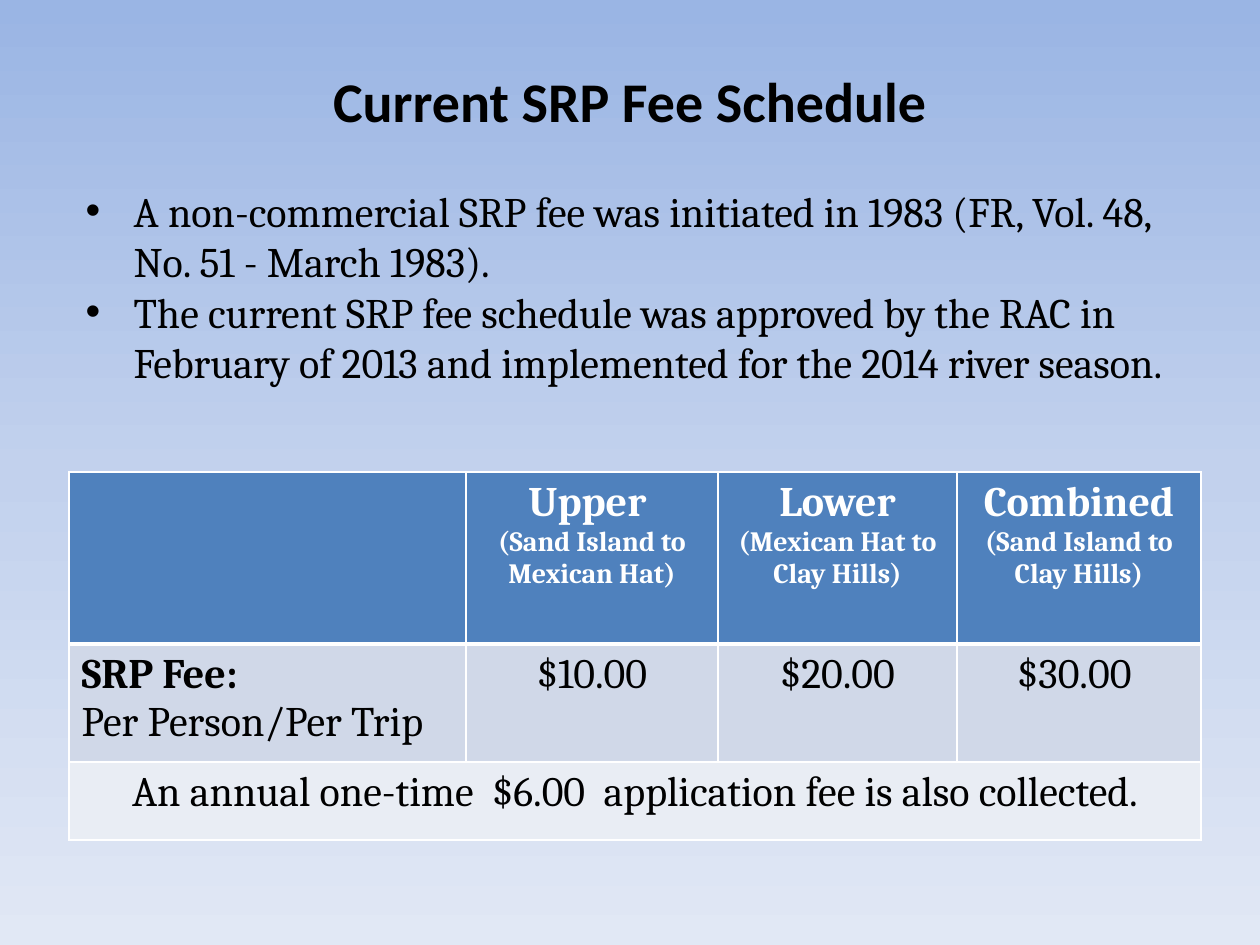
from copy import deepcopy

from lxml import etree
from pptx import Presentation
from pptx.dml.color import RGBColor
from pptx.enum.text import MSO_ANCHOR, MSO_AUTO_SIZE, PP_ALIGN
from pptx.oxml.ns import qn
from pptx.util import Pt

CENTER, LEFT = PP_ALIGN.CENTER, PP_ALIGN.LEFT
MIDDLE, TOP = MSO_ANCHOR.MIDDLE, MSO_ANCHOR.TOP
NO_FIT, GROW = MSO_AUTO_SIZE.NONE, MSO_AUTO_SIZE.SHAPE_TO_FIT_TEXT

BLACK = RGBColor(0x00, 0x00, 0x00)
WHITE = RGBColor(0xFF, 0xFF, 0xFF)
HEADER_BLUE = RGBColor(0x4F, 0x81, 0xBD)
BAND_DARK = RGBColor(0xD0, 0xD8, 0xE8)
BAND_LIGHT = RGBColor(0xE9, 0xED, 0xF4)
SKY = [
    (0, RGBColor(0x9A, 0xB5, 0xE4)),
    (0.5, RGBColor(0xC2, 0xD1, 0xED)),
    (1, RGBColor(0xE1, 0xE8, 0xF5)),
]

TITLE = {"name": "Calibri", "size": Pt(32), "bold": True, "color": BLACK}
BODY = {"name": "Cambria", "size": Pt(24), "bold": False, "color": BLACK}
LABEL = {**BODY, "bold": True}
HEADER = {**LABEL, "color": WHITE}
SUBHEADER = {**HEADER, "size": Pt(16)}

BULLETS = [
    "A non-commercial SRP fee was initiated in 1983 (FR, Vol. 48, No. 51 - March 1983).",
    "The current SRP fee schedule was approved by the RAC in February of 2013 "
    "and implemented for the 2014 river season.",
]
COLUMNS = [397, 252, 239, 244]
ROWS = [172, 118, 78]
ROW_FILLS = [HEADER_BLUE, BAND_DARK, BAND_LIGHT]
ROW_LINES = [1, 3, 1, 1]
REACHES = [
    ("Upper ", "(Sand Island to Mexican Hat)"),
    ("Lower", "(Mexican Hat to Clay Hills)"),
    ("Combined", "(Sand Island to Clay Hills)"),
]
FEES = ["$10.00", "$20.00", "$30.00 "]
FOOTNOTE = "An annual one-time  $6.00  application fee is also collected."


def px(length):
    return round(length * 914400 / 126)


def place(shape, left, top, width, height):
    shape.left, shape.top = px(left), px(top)
    shape.width, shape.height = px(width), px(height)


def add_bullet(para):
    properties = para._p.get_or_add_pPr()
    properties.set("marL", str(px(48)))
    properties.set("indent", str(-px(48)))
    etree.SubElement(properties, qn("a:buFont")).set("typeface", "Arial")
    etree.SubElement(properties, qn("a:buChar")).set("char", "•")


def write(frame, lines, align, bullets=False):
    for index, (text, style) in enumerate(lines):
        para = frame.paragraphs[0] if index == 0 else frame.add_paragraph()
        para.alignment = align
        para.space_before = Pt(0)
        if bullets:
            add_bullet(para)
        span = para.add_run()
        span.text = text
        for name, value in style.items():
            if name == "color":
                span.font.color.rgb = value
            else:
                setattr(span.font, name, value)


def fill_placeholder(box, bounds, lines, align, anchor, fit, bullets=False):
    place(box, *bounds)
    frame = box.text_frame
    frame.word_wrap = True
    frame.auto_size = fit
    frame.vertical_anchor = anchor
    write(frame, lines, align, bullets)


def paint_background(page):
    fill = page.background.fill
    fill.gradient()
    fill.gradient_angle = 270
    stop_list = page.element.find(".//" + qn("a:gsLst"))
    stop_list.append(deepcopy(stop_list[-1]))
    for stop, (position, color) in zip(fill.gradient_stops, SKY):
        stop.position = position
        stop.color.rgb = color


def format_cell(cell, fill, top_line, bottom_line):
    properties = cell._tc.get_or_add_tcPr()
    for side, points in zip("LRTB", (1, 1, top_line, bottom_line)):
        line = etree.SubElement(properties, qn("a:ln" + side), w=str(Pt(points)))
        solid = etree.SubElement(line, qn("a:solidFill"))
        etree.SubElement(solid, qn("a:srgbClr"), val=str(WHITE))
    cell.fill.solid()
    cell.fill.fore_color.rgb = fill


def add_fee_table(page):
    table = page.shapes.add_table(
        len(ROWS), len(COLUMNS), px(69), px(472), px(sum(COLUMNS)), px(sum(ROWS))
    ).table
    for column, width in zip(table.columns, COLUMNS):
        column.width = px(width)
    for index, (row, height) in enumerate(zip(table.rows, ROWS)):
        row.height = px(height)
        for cell in row.cells:
            format_cell(cell, ROW_FILLS[index], *ROW_LINES[index:index + 2])

    for column, ((name, stretch), fee) in enumerate(zip(REACHES, FEES), start=1):
        header = [(name, HEADER), (stretch, SUBHEADER)]
        write(table.cell(0, column).text_frame, header, CENTER)
        write(table.cell(1, column).text_frame, [(fee, BODY)], CENTER)
    label = [("SRP Fee:", LABEL), ("Per Person/Per Trip", BODY)]
    write(table.cell(1, 0).text_frame, label, LEFT)
    table.cell(2, 0).merge(table.cell(2, len(COLUMNS) - 1))
    write(table.cell(2, 0).text_frame, [(FOOTNOTE, BODY)], CENTER)


def main():
    deck = Presentation()
    deck.slide_width, deck.slide_height = px(1260), px(945)
    page = deck.slides.add_slide(deck.slide_layouts[1])
    paint_background(page)
    title, body = page.placeholders
    fill_placeholder(title, (105, 21, 1050, 158),
                     [("Current SRP Fee Schedule", TITLE)], CENTER, MIDDLE, NO_FIT)
    add_fee_table(page)
    fill_placeholder(body, (73, 179, 1124, 267),
                     [(text, BODY) for text in BULLETS], LEFT, TOP, GROW, bullets=True)
    deck.save("out.pptx")


if __name__ == "__main__":
    main()
